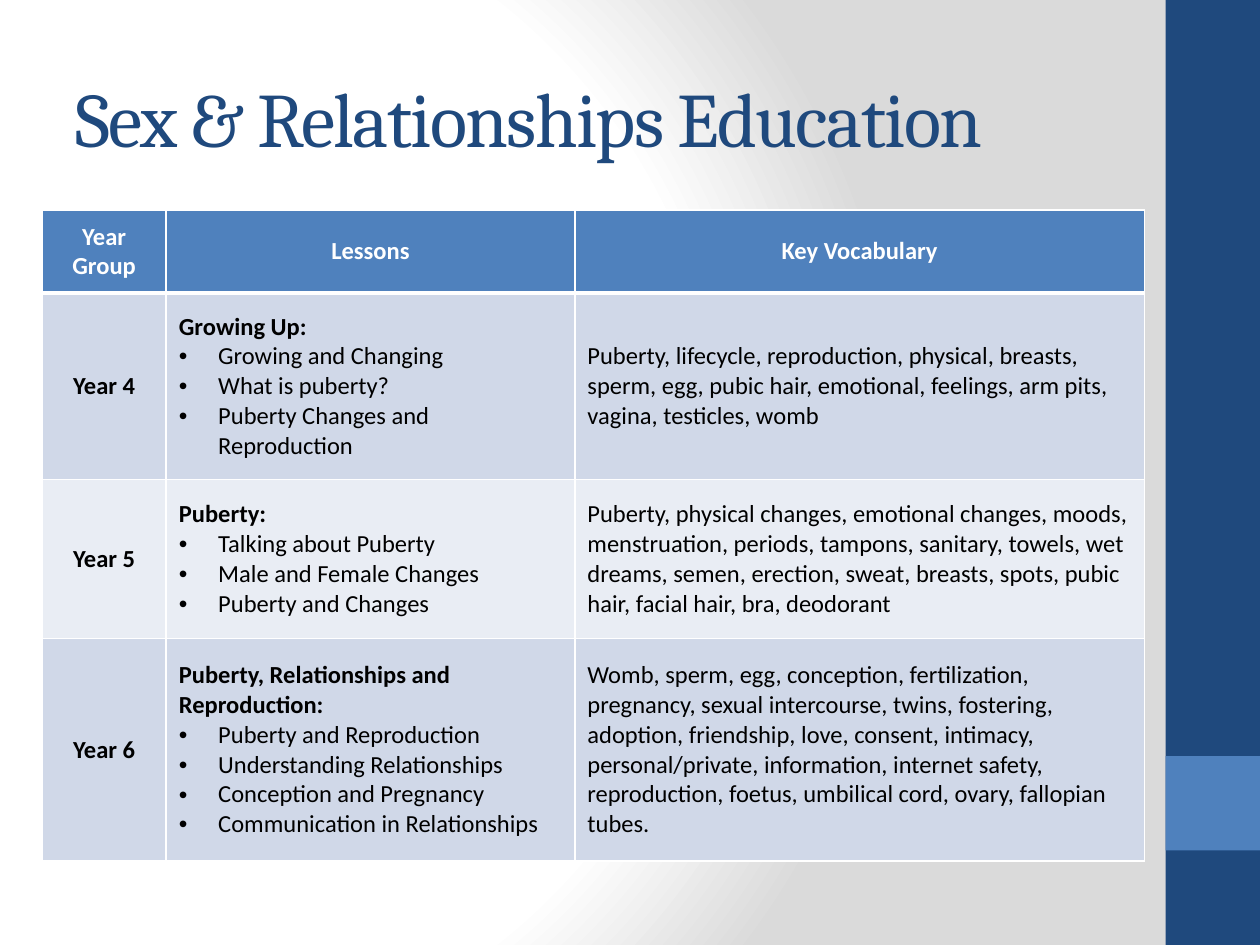
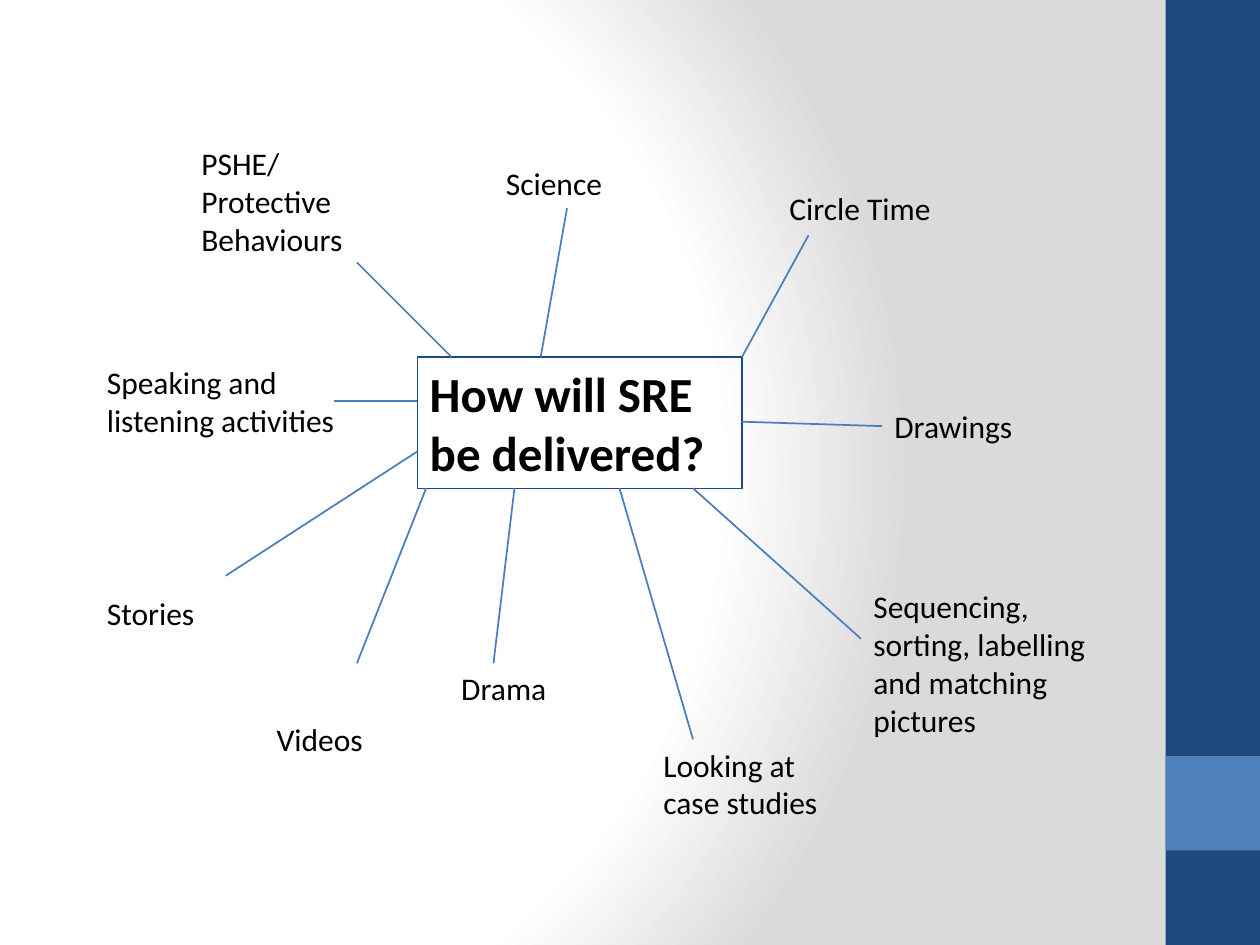
from dataclasses import dataclass

import lxml.etree
import pptx
import pptx.dml.color
import pptx.enum.shapes
import pptx.enum.text
import pptx.oxml
import pptx.oxml.ns
import pptx.slide
import pptx.table
import pptx.text.text
import pptx.util

Pt = pptx.util.Pt
qn = pptx.oxml.ns.qn
Align = pptx.enum.text.PP_ALIGN
Anchor = pptx.enum.text.MSO_ANCHOR
Shapes = pptx.enum.shapes.MSO_SHAPE

COLORS = {
    "navy": "1F497D", "blue": "4F81BD", "spoke": "4B7EBC",
    "white": "FFFFFF", "black": "000000", "grey": "DADADA",
    "row_dark": "D0D8E8", "row_light": "E9EDF4",
}
BODY_FONT, TITLE_FONT = "Calibri", "Cambria"
SLIDE_WIDTH, SLIDE_HEIGHT = 720, 540
TITLE_ONLY, BLANK = 5, 6


@dataclass(frozen=True)
class Box:
    left: float
    top: float
    width: float
    height: float

    def lengths(self) -> list[pptx.util.Length]:
        return [Pt(value) for value in (self.left, self.top, self.width, self.height)]


@dataclass(frozen=True)
class Band:
    box: Box
    color: str


@dataclass(frozen=True)
class YearGroup:
    name: str
    topic: str
    lessons: list[str]
    vocabulary: str


@dataclass(frozen=True)
class Method:
    """A way of teaching, with the spoke that joins it to the hub."""
    text: str
    box: Box
    start: tuple[float, float]
    end: tuple[float, float]


BANDS = [
    Band(Box(666, 0, 54, SLIDE_HEIGHT), "navy"),
    Band(Box(666, 432, 54, 54), "blue"),
]

HEADINGS = ["Year Group", "Lessons", "Key Vocabulary"]
COLUMN_WIDTHS = [71, 233.5, 325.5]
ROW_HEIGHTS = [47.5, 106.5, 91, 127]
BULLET_INDENT = 22.5
YEAR_GROUPS = [
    YearGroup(
        "Year 4", "Growing Up:",
        ["Growing and Changing", "What is puberty?", "Puberty Changes and Reproduction"],
        "Puberty, lifecycle, reproduction, physical, breasts, sperm, egg, pubic hair, "
        "emotional, feelings, arm pits, vagina, testicles, womb"),
    YearGroup(
        "Year 5", "Puberty:",
        ["Talking about Puberty", "Male and Female Changes", "Puberty and Changes"],
        "Puberty, physical changes, emotional changes, moods, menstruation, periods, "
        "tampons, sanitary, towels, wet dreams, semen, erection, sweat, breasts, spots, "
        "pubic hair, facial hair, bra, deodorant"),
    YearGroup(
        "Year 6", "Puberty, Relationships and Reproduction:",
        ["Puberty and Reproduction", "Understanding Relationships",
         "Conception and Pregnancy", "Communication in Relationships"],
        "Womb, sperm, egg, conception, fertilization, pregnancy, sexual intercourse, "
        "twins, fostering, adoption, friendship, love, consent, intimacy, "
        "personal/private, information, internet safety, reproduction, foetus, "
        "umbilical cord, ovary, fallopian tubes."),
]

HUB = Box(238.5, 204, 185.5, 75)
HUB_RIGHT, HUB_BOTTOM = HUB.left + HUB.width, HUB.top + HUB.height
METHODS = [
    Method("PSHE/ Protective Behaviours", Box(108, 79, 105, 73), (258, HUB.top), (204, 150)),
    Method("Science", Box(282, 90, 84, 29), (309, HUB.top), (324, 119)),
    Method("Circle Time", Box(444, 104.5, 96, 29), (HUB_RIGHT, HUB.top), (462, 134.5)),
    Method("Drawings", Box(504, 229, 105, 29), (HUB_RIGHT, 241), (504, 243.5)),
    Method("Sequencing, sorting, labelling and matching pictures",
           Box(492, 332, 155, 94.5), (396, HUB_BOTTOM), (492, 365)),
    Method("Looking at case studies", Box(372, 422.5, 105, 51), (354, HUB_BOTTOM), (396, 422.5)),
    Method("Drama", Box(256.5, 379, 105, 29), (294, HUB_BOTTOM), (282, 379)),
    Method("Videos", Box(151, 408, 105, 29), (243.5, HUB_BOTTOM), (204, 379)),
    Method("Stories", Box(54, 336, 105, 29), (HUB.left, 258), (129, 329)),
    Method("Speaking and listening activities", Box(54, 204, 150, 51), (HUB.left, 229), (191, 229)),
]


# Shared helpers
def rgb(name: str) -> pptx.dml.color.RGBColor:
    return pptx.dml.color.RGBColor.from_string(COLORS[name])


def add_run(paragraph: pptx.text.text._Paragraph, text: str, size: float,
            color: str = "black", bold: bool = False,
            font_name: str = BODY_FONT) -> pptx.text.text._Run:
    run = paragraph.add_run()
    run.text = text
    run.font.name = font_name
    run.font.size = Pt(size)
    run.font.bold = bold
    run.font.color.rgb = rgb(color)
    return run


def fit_text(frame: pptx.text.text.TextFrame, text: str, size: float, bold: bool = False) -> None:
    frame.word_wrap = True
    frame.auto_size = pptx.enum.text.MSO_AUTO_SIZE.SHAPE_TO_FIT_TEXT
    frame.paragraphs[0].alignment = Align.LEFT
    add_run(frame.paragraphs[0], text, size, bold=bold)


def set_background(master: pptx.slide.SlideMaster) -> None:
    master.background.fill.gradient()
    gradient = master.element.find(".//" + qn("p:bgPr")).find(qn("a:gradFill"))
    for child in list(gradient):
        gradient.remove(child)
    stops = lxml.etree.SubElement(gradient, qn("a:gsLst"))
    for position, color in ((0, "white"), (75, "white"), (100, "grey")):
        stop = lxml.etree.SubElement(stops, qn("a:gs"), pos=str(position * 1000))
        lxml.etree.SubElement(stop, qn("a:srgbClr"), val=COLORS[color])
    circle = lxml.etree.SubElement(gradient, qn("a:path"), path="circle")
    lxml.etree.SubElement(circle, qn("a:fillToRect"),
                          l="20000", t="50000", r="100000", b="50000")


def add_slide(presentation, layout_index: int) -> pptx.slide.Slide:
    slide = presentation.slides.add_slide(presentation.slide_layouts[layout_index])
    for band in BANDS:
        shape = slide.shapes.add_shape(Shapes.RECTANGLE, *band.box.lengths())
        shape.shadow.inherit = False
        shape.fill.solid()
        shape.fill.fore_color.rgb = rgb(band.color)
        shape.line.fill.background()
    return slide


def format_title(slide: pptx.slide.Slide, text: str) -> None:
    title = slide.shapes.title
    title.left, title.top, title.width, title.height = Box(36, 21.5, 600, 90).lengths()
    frame = title.text_frame
    frame.auto_size = pptx.enum.text.MSO_AUTO_SIZE.NONE
    frame.vertical_anchor = Anchor.MIDDLE
    frame.paragraphs[0].alignment = Align.LEFT
    run = add_run(frame.paragraphs[0], text, 44, "navy", font_name=TITLE_FONT)
    run.font._element.set("spc", "-100")


# Year group table
def set_borders(cell: pptx.table._Cell, top: float, bottom: float) -> None:
    properties = cell._tc.get_or_add_tcPr()
    widths = {"lnL": 1, "lnR": 1, "lnT": top, "lnB": bottom}
    for index, (side, width) in enumerate(widths.items()):
        line = lxml.etree.Element(qn("a:" + side), w=str(Pt(width)))
        fill = lxml.etree.SubElement(line, qn("a:solidFill"))
        lxml.etree.SubElement(fill, qn("a:srgbClr"), val=COLORS["white"])
        properties.insert(index, line)


def add_bullet(paragraph: pptx.text.text._Paragraph) -> None:
    properties = paragraph._p.get_or_add_pPr()
    properties.set("marL", str(Pt(BULLET_INDENT)))
    properties.set("indent", str(-Pt(BULLET_INDENT)))
    lxml.etree.SubElement(properties, qn("a:buFont"), typeface="Arial")
    lxml.etree.SubElement(properties, qn("a:buChar"), char="•")


def write_cell(cell: pptx.table._Cell, text: str, color: str = "black",
               bold: bool = False, centered: bool = False) -> None:
    paragraph = cell.text_frame.paragraphs[0]
    paragraph.alignment = Align.CENTER if centered else Align.LEFT
    add_run(paragraph, text, 14, color, bold)


def add_year_table(slide: pptx.slide.Slide) -> None:
    box = Box(24, 120, sum(COLUMN_WIDTHS), sum(ROW_HEIGHTS))
    table = slide.shapes.add_table(
        len(ROW_HEIGHTS), len(COLUMN_WIDTHS), *box.lengths()).table
    for column, width in zip(table.columns, COLUMN_WIDTHS):
        column.width = Pt(width)

    # Fills and borders
    row_colors = ["blue", "row_dark", "row_light", "row_dark"]
    for index, (row, height) in enumerate(zip(table.rows, ROW_HEIGHTS)):
        row.height = Pt(height)
        for cell in row.cells:
            cell.vertical_anchor = Anchor.MIDDLE
            cell.fill.solid()
            cell.fill.fore_color.rgb = rgb(row_colors[index])
            set_borders(cell, top=3 if index == 1 else 1, bottom=3 if index == 0 else 1)

    # Wording
    for column_index, heading in enumerate(HEADINGS):
        write_cell(table.cell(0, column_index), heading, "white", bold=True, centered=True)
    for row_index, group in enumerate(YEAR_GROUPS, start=1):
        name_cell, lessons_cell, vocabulary_cell = table.rows[row_index].cells
        write_cell(name_cell, group.name, bold=True, centered=True)
        write_cell(lessons_cell, group.topic, bold=True)
        for lesson in group.lessons:
            paragraph = lessons_cell.text_frame.add_paragraph()
            add_bullet(paragraph)
            add_run(paragraph, lesson, 14)
        write_cell(vocabulary_cell, group.vocabulary)


# Delivery diagram
def add_hub(slide: pptx.slide.Slide, text: str) -> None:
    hub = slide.shapes.add_shape(Shapes.RECTANGLE, *HUB.lengths())
    hub.shadow.inherit = False
    hub.fill.background()
    hub.line.color.rgb = rgb("navy")
    hub.line.width = Pt(0.75)
    hub.text_frame.vertical_anchor = Anchor.TOP
    fit_text(hub.text_frame, text, 28, bold=True)


def add_method(slide: pptx.slide.Slide, method: Method) -> None:
    label = slide.shapes.add_textbox(*method.box.lengths())
    fit_text(label.text_frame, method.text, 18)
    spoke = slide.shapes.add_connector(
        pptx.enum.shapes.MSO_CONNECTOR.STRAIGHT,
        *[Pt(value) for value in method.start + method.end])
    spoke.line.color.rgb = rgb("spoke")
    spoke.line.width = Pt(1)
    lxml.etree.SubElement(spoke._element.spPr, qn("a:effectLst"))


def main() -> None:
    presentation = pptx.Presentation()
    presentation.slide_width = Pt(SLIDE_WIDTH)
    presentation.slide_height = Pt(SLIDE_HEIGHT)
    set_background(presentation.slide_master)

    # Slide 1: lessons and vocabulary
    lessons_slide = add_slide(presentation, TITLE_ONLY)
    format_title(lessons_slide, "Sex & Relationships Education")
    add_year_table(lessons_slide)

    # Slide 2: ways of teaching
    delivery_slide = add_slide(presentation, BLANK)
    add_hub(delivery_slide, "How will SRE be delivered?")
    for method in METHODS:
        add_method(delivery_slide, method)

    presentation.save("out.pptx")


if __name__ == "__main__":
    main()
